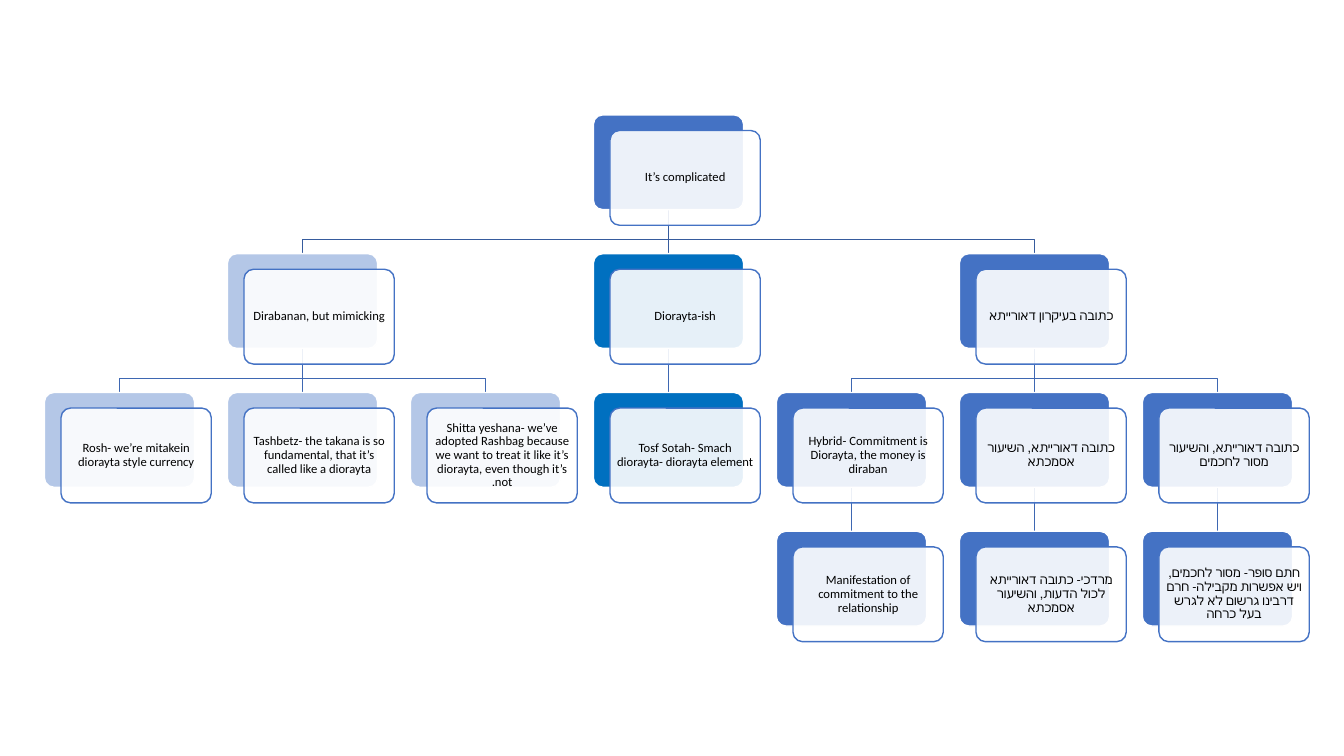
from pptx import Presentation
from pptx.dml.color import RGBColor
from pptx.enum.shapes import MSO_CONNECTOR, MSO_SHAPE
from pptx.enum.text import MSO_ANCHOR, PP_ALIGN
from pptx.oxml.ns import qn
from pptx.oxml.xmlchemy import OxmlElement
from pptx.util import Inches, Pt

ROUND = MSO_SHAPE.ROUNDED_RECTANGLE
STRAIGHT = MSO_CONNECTOR.STRAIGHT
MIDDLE = MSO_ANCHOR.MIDDLE
CENTER = PP_ALIGN.CENTER

WHITE = RGBColor(0xFF, 0xFF, 0xFF)
BLACK = RGBColor(0, 0, 0)
BLUE = RGBColor(0x44, 0x72, 0xC4)
AZURE = RGBColor(0x00, 0x70, 0xC0)
PALE = RGBColor(0xB4, 0xC7, 0xE7)
DARK = RGBColor(0x36, 0x5B, 0x9D)
MID = RGBColor(0x3E, 0x67, 0xB2)

WIDE, HIGH = Inches(1.49), Inches(0.94)
COL_GAP, ROW_GAP = Inches(1.815), Inches(1.377)
SHIFT_X, SHIFT_Y = Inches(0.165), Inches(0.155)
BEND = Inches(0.14)

# Each node: (column, row), parent's (column, row), colour, wording
NODES = [
    ((3, 0), None, BLUE, "It’s complicated"),
    ((1, 1), (3, 0), PALE, "Dirabanan, but mimicking"),
    ((3, 1), (3, 0), AZURE, "Diorayta-ish"),
    ((5, 1), (3, 0), BLUE, "כתובה בעיקרון דאורייתא"),
    ((0, 2), (1, 1), PALE, "Rosh- we’re mitakein diorayta style currency"),
    ((1, 2), (1, 1), PALE, "Tashbetz- the takana is so fundamental, that it’s called like a diorayta"),
    ((2, 2), (1, 1), PALE, "Shitta yeshana- we’ve adopted Rashbag because we want to treat it "
                           "like it’s diorayta, even though it’s not."),
    ((3, 2), (3, 1), AZURE, "Tosf Sotah- Smach diorayta- diorayta element"),
    ((4, 2), (5, 1), BLUE, "Hybrid- Commitment is Diorayta, the money is diraban"),
    ((5, 2), (5, 1), BLUE, "כתובה דאורייתא, השיעור אסמכתא"),
    ((6, 2), (5, 1), BLUE, "כתובה דאורייתא, והשיעור מסור לחכמים"),
    ((4, 3), (4, 2), BLUE, "Manifestation of commitment to the relationship"),
    ((5, 3), (5, 2), BLUE, "מרדכי- כתובה דאורייתא לכול הדעות, והשיעור אסמכתא"),
    ((6, 3), (6, 2), BLUE, "חתם סופר- מסור לחכמים, ויש אפשרות מקבילה- חרם "
                           "דרבינו גרשום לא לגרש בעל כרחה"),
]


def add_box(slide, left, top, fill, edge):
    """Add one rounded box and return it."""
    box = slide.shapes.add_shape(ROUND, left, top, WIDE, HIGH)
    box.adjustments[0] = 0.1
    box.shadow.inherit = False
    box.fill.solid()
    box.fill.fore_color.rgb = fill
    box.line.color.rgb = edge
    box.line.width = Pt(1)
    return box


def add_node(slide, left, top, fill, text):
    """Add a coloured box with a see-through text card, and return the box."""
    back = add_box(slide, left, top, fill, WHITE)
    card = add_box(slide, left + SHIFT_X, top + SHIFT_Y, WHITE, BLUE)
    alpha = OxmlElement("a:alpha")
    alpha.set("val", "90000")
    card._element.spPr.find(".//" + qn("a:srgbClr")).append(alpha)
    frame = card.text_frame
    frame.word_wrap = True
    frame.vertical_anchor = MIDDLE
    frame.margin_left = frame.margin_right = Inches(0.04)
    frame.margin_top = frame.margin_bottom = Inches(0.04)
    frame.text = text
    para = frame.paragraphs[0]
    para.alignment = CENTER
    para.line_spacing = 0.9
    para._p.get_or_add_pPr().set("rtl", "1")
    font = para.runs[0].font
    font.name = "Calibri"
    font.size = Pt(9)
    font.color.rgb = BLACK
    return back


def add_link(slide, upper, lower, color):
    """Link two boxes, straight or with a bend, behind all boxes."""
    start = upper.left + WIDE // 2, upper.top + HIGH
    end = lower.left + WIDE // 2, lower.top
    if start[0] == end[0]:
        link = slide.shapes.add_connector(STRAIGHT, *start, *end)
        link.begin_connect(upper, 2)
        link.end_connect(lower, 0)
        link._element.spPr.append(OxmlElement("a:effectLst"))
    else:
        turn = end[1] - BEND
        path = slide.shapes.build_freeform(*start)
        path.add_line_segments([(start[0], turn), (end[0], turn), end], close=False)
        link = path.convert_to_shape()
        link.fill.background()
        link.shadow.inherit = False
    link.line.color.rgb = color
    link.line.width = Pt(1)
    link._element.getparent().insert(2, link._element)


def add_tree(slide, left, top):
    """Place the whole tree from its upper left corner."""
    boxes = {}
    for (col, row), _, fill, text in NODES:
        boxes[col, row] = add_node(
            slide, left + col * COL_GAP, top + row * ROW_GAP, fill, text)
    for spot, parent, _, _ in NODES:
        if parent:
            add_link(slide, boxes[parent], boxes[spot], DARK if parent[1] == 0 else MID)


def main():
    """Build and save the slide."""
    deck = Presentation()
    deck.slide_width, deck.slide_height = Inches(13.33), Inches(7.5)
    slide = deck.slides.add_slide(deck.slide_layouts[6])
    add_tree(slide, Inches(0.44), Inches(1.14))
    deck.save("out.pptx")


if __name__ == "__main__":
    main()
